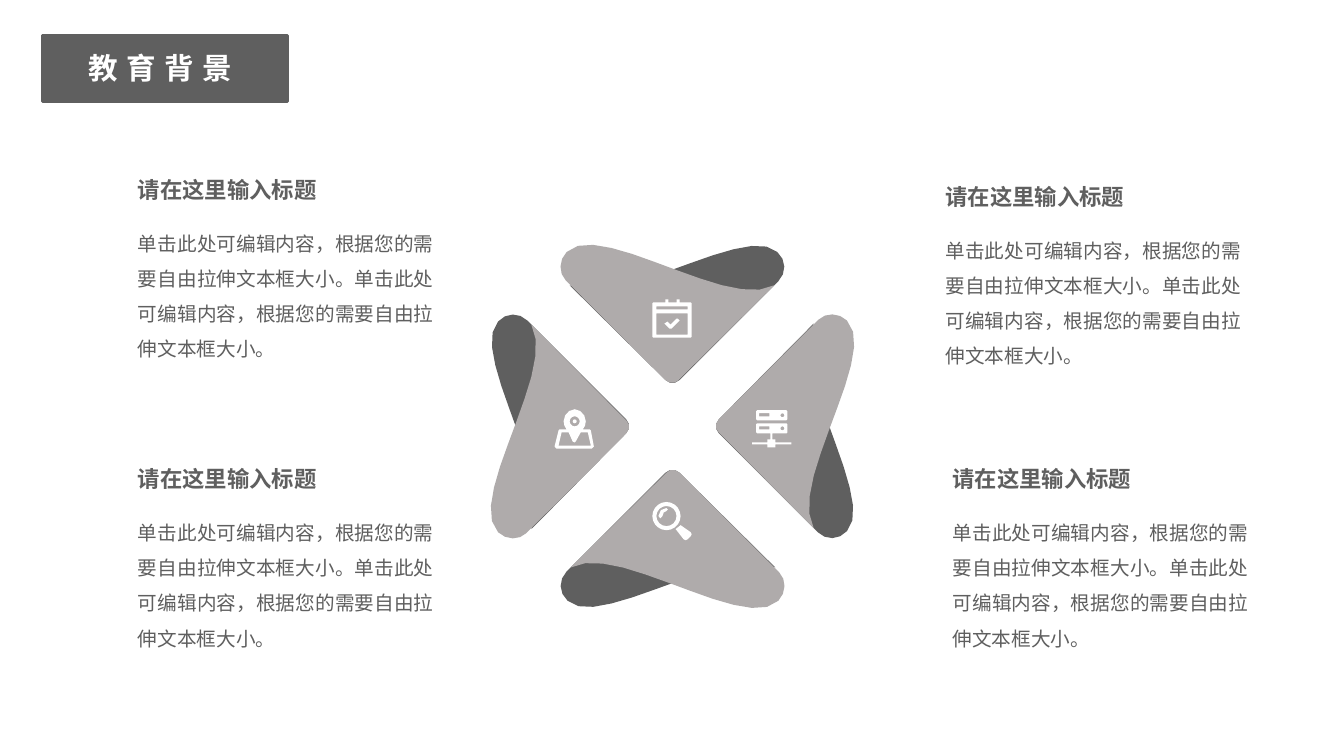
from math import cos, dist, pi, sin

from pptx import Presentation
from pptx.dml.color import RGBColor as Rgb
from pptx.enum.shapes import MSO_SHAPE as Shape
from pptx.enum.text import MSO_AUTO_SIZE as Fit, PP_ALIGN as Align
from pptx.oxml.ns import qn
from pptx.util import Inches, Pt
from lxml.etree import SubElement

COLORS = {"dark": "5F5F5F", "light": "AFABAB", "white": "FFFFFF"}
FONT = "Noto Sans CJK SC"
HEAD = "请在这里输入标题"
BODY = "单击此处可编辑内容，根据您的需要自由拉伸文本框大小。" * 2
UNIT = 1000  # outline units per inch


def trace(*steps):
    """Turn points (pairs) and Bezier curves (six numbers) into points."""
    pts = []
    for step in steps:
        if len(step) == 2:
            pts.append(step)
            continue
        knots = [pts[-1], step[:2], step[2:4], step[4:]]
        count = min(11, 2 + int(8 * dist(knots[0], knots[3])))
        for i in range(1, count + 1):
            t = i / count
            weights = ((1 - t) ** 3, 3 * t * (1 - t) ** 2,
                       3 * t * t * (1 - t), t ** 3)
            pts.append(tuple(sum(w * k[n] for w, k in zip(weights, knots))
                             for n in (0, 1)))
    return pts


def ring(x, y, r, count=12):
    turns = [2 * pi * i / count for i in range(count)]
    return [(x + r * cos(a), y + r * sin(a)) for a in turns]


def box(x1, y1, x2, y2, r=0):
    """Rectangle whose corners are cut by r."""
    if not r:
        return [(x1, y1), (x2, y1), (x2, y2), (x1, y2)]
    return [(x1, y1 + r), (x1 + r, y1), (x2 - r, y1), (x2, y1 + r),
            (x2, y2 - r), (x2 - r, y2), (x1 + r, y2), (x1, y2 - r)]


def turn(pts, count, mid):
    """Move points to the centre after a number of clockwise quarter turns."""
    for _ in range(count):
        pts = [(-y, x) for x, y in pts]
    return [(mid[0] + x, mid[1] + y) for x, y in pts]


class Page:
    def __init__(self, slide):
        self.shapes = slide.shapes

    def paint(self, shape, color):
        shape.shadow.inherit = False
        shape.fill.solid()
        shape.fill.fore_color.rgb = Rgb.from_string(COLORS[color])
        shape.line.fill.background()

    def banner(self, x, y, w, h):
        shape = self.shapes.add_shape(Shape.RECTANGLE, *map(Inches, (x, y, w, h)))
        self.paint(shape, "dark")
        shape.line.color.rgb = Rgb.from_string(COLORS["dark"])
        shape.line.width = Pt(2.25)

    def outline(self, color, *loops):
        """Draw closed loops as one shape; a loop inside another is a hole."""
        pen = None
        for loop in loops:
            first, *rest = [(x * UNIT, y * UNIT) for x, y in loop]
            if pen is None:
                pen = self.shapes.build_freeform(*first, scale=Inches(1) / UNIT)
            else:
                pen.move_to(*first)
            pen.add_line_segments(rest, close=True)
        self.paint(pen.convert_to_shape(), color)

    def text(self, words, x, y, w, h, size, color="dark", bold=False,
             wrap=True, align=None, lead=None, gap=0):
        frame = self.shapes.add_textbox(*map(Inches, (x, y, w, h))).text_frame
        frame.word_wrap = wrap
        frame.auto_size = Fit.SHAPE_TO_FIT_TEXT
        para = frame.paragraphs[0]
        para.alignment = align
        para.line_spacing = lead
        run = para.add_run()
        run.text = words
        font = run.font
        font.size, font.bold, font.name = Pt(size), bold, FONT
        font.color.rgb = Rgb.from_string(COLORS[color])
        props = run._r.get_or_add_rPr()
        SubElement(props, qn("a:ea")).set("typeface", FONT)
        if gap:
            props.set("spc", str(gap * 100))

    def note(self, x, y):
        self.text(HEAD, x, y, 2.1, 0.37, 16, bold=True)
        self.text(BODY, x, y + 0.43, 3.13, 1.51, 14,
                  align=Align.JUSTIFY, lead=1.5)


def petals(page):
    mid = (6.67, 4.23)
    back = trace((-1.02, -1.4), (-0.55, -1.14, 0.73, -2.03, 1.04, -1.73),
                 (1.13, -1.65, 1.13, -1.52, 1.05, -1.44), (0.07, -0.46),
                 (0.03, -0.42, -0.03, -0.42, -0.07, -0.46))
    front = trace((1.01, -1.4), (0.55, -1.14, -0.72, -2.06, -1.05, -1.73),
                  (-1.13, -1.65, -1.13, -1.52, -1.06, -1.45), (-0.07, -0.46),
                  (-0.03, -0.42, 0.03, -0.42, 0.06, -0.46))
    for side in range(4):
        page.outline("dark", turn(back, side, mid))
        page.outline("light", turn(front, side, mid))


def date(page):
    tick = [(6.72, 3.16), (6.74, 3.18), (6.66, 3.26), (6.64, 3.26),
            (6.59, 3.21), (6.62, 3.19), (6.65, 3.22), (6.71, 3.16)]
    pegs = [box(x, 2.97, x + 0.03, 3) for x in (6.6, 6.71)]
    page.outline("white", box(6.47, 3, 6.86, 3.35, 0.01), *pegs,
                 box(6.51, 3.04, 6.82, 3.07), box(6.51, 3.11, 6.82, 3.32), tick)


def lens(page):
    grip = [(6.75, 5.21), (6.85, 5.28), (6.86, 5.3), (6.85, 5.32), (6.82, 5.35),
            (6.8, 5.36), (6.78, 5.35), (6.71, 5.26), (6.7, 5.25)]
    shine = trace((6.61, 5.04), (6.63, 5.04, 6.63, 5.07, 6.61, 5.07),
                  (6.59, 5.07, 6.57, 5.09, 6.57, 5.12),
                  (6.57, 5.15, 6.53, 5.15, 6.53, 5.12),
                  (6.53, 5.07, 6.57, 5.04, 6.61, 5.04))
    page.outline("white", ring(6.61, 5.12, 0.14, 20), ring(6.61, 5.12, 0.1, 16),
                 shine, grip)


def place(page):
    edge = trace((5.7, 4.06), (5.76, 4.06, 5.81, 4.12, 5.81, 4.18),
                 (5.81, 4.21, 5.8, 4.24, 5.78, 4.26), (5.85, 4.26), (5.86, 4.27),
                 (5.89, 4.43), (5.87, 4.45), (5.52, 4.45), (5.5, 4.43),
                 (5.54, 4.27), (5.55, 4.26), (5.62, 4.26),
                 (5.6, 4.24, 5.59, 4.21, 5.59, 4.18),
                 (5.59, 4.12, 5.64, 4.06, 5.7, 4.06))
    sheet = [(5.57, 4.29), (5.54, 4.42), (5.86, 4.42), (5.83, 4.29),
             (5.76, 4.29), (5.71, 4.38), (5.7, 4.39), (5.68, 4.38), (5.64, 4.29)]
    page.outline("white", edge, sheet, ring(5.7, 4.18, 0.05),
                 ring(5.7, 4.18, 0.02, 8))


def server(page):
    loops = []
    for y in (4.07, 4.2):
        loops += [box(7.5, y, 7.81, y + 0.1, 0.01),
                  box(7.53, y + 0.03, 7.63, y + 0.06),
                  ring(7.76, y + 0.05, 0.02, 8)]
    page.outline("white", *loops, box(7.64, 4.3, 7.66, 4.36),
                 box(7.61, 4.36, 7.69, 4.44), box(7.46, 4.39, 7.61, 4.41),
                 box(7.69, 4.39, 7.85, 4.41))


def main():
    deck = Presentation()
    deck.slide_width, deck.slide_height = Inches(13.33), Inches(7.5)
    page = Page(deck.slides.add_slide(deck.slide_layouts[6]))
    page.banner(0.42, 0.35, 2.43, 0.66)
    page.text("教育背景", 0.78, 0.45, 1.71, 0.46, 21.1, "white",
              bold=True, wrap=False, gap=6)
    petals(page)
    for icon in (date, lens, place, server):
        icon(page)
    for x, y in ((1.27, 1.7), (1.27, 4.57), (9.28, 1.77), (9.35, 4.57)):
        page.note(x, y)
    deck.save("out.pptx")


if __name__ == "__main__":
    main()
